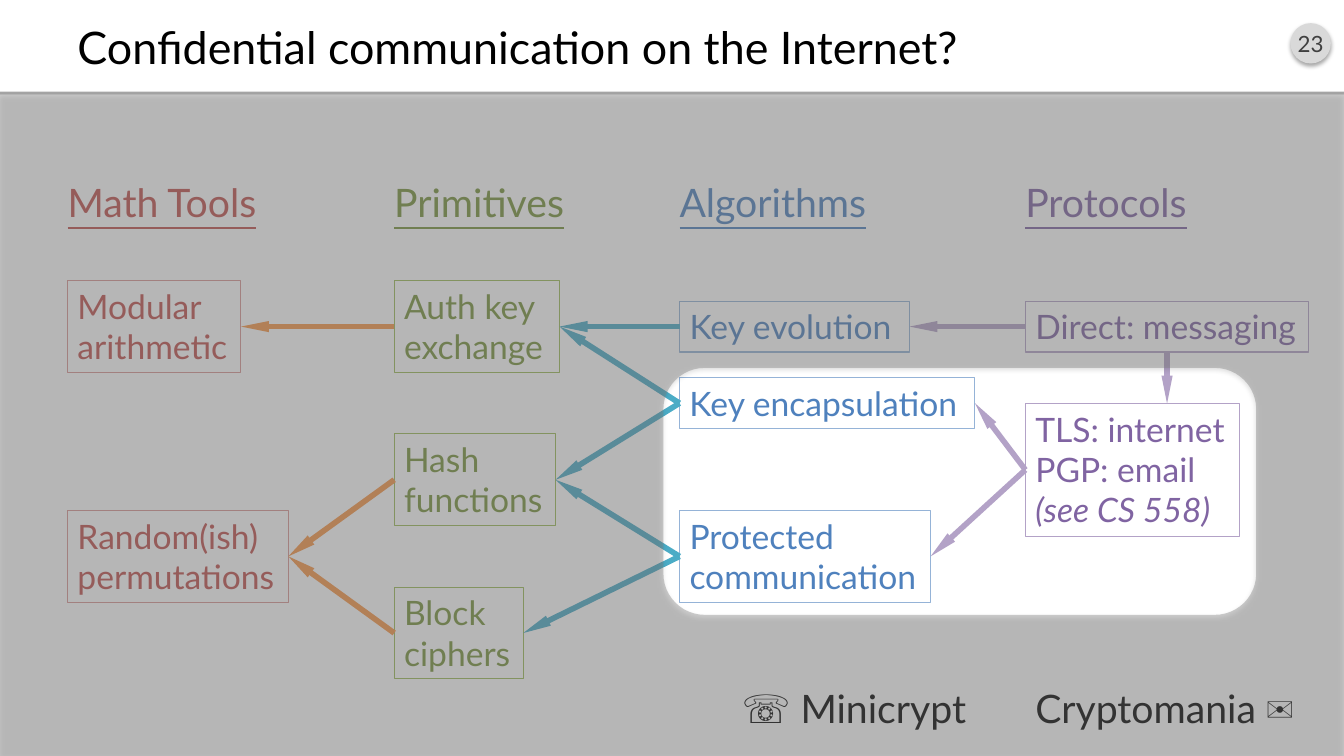
"""Build the slide mapping cryptographic tools to Internet protocols."""
import math

import lxml.etree
import pptx
import pptx.dml.color
import pptx.enum.shapes
import pptx.enum.text
import pptx.oxml.ns
import pptx.util

TITLE = "Confidential communication on the Internet?"
PAGE = "23"
FONT = "Lato"
COLORS = {
    "black": "000000", "badge": "D9D9D9", "page": "404040", "rule": "A6A6A6",
    "veil": "808080", "orange": "F79646", "teal": "4BACC6", "lilac": "B3A2C7",
}
COLUMNS = [
    {"head": "Math Tools", "x": 0.67, "w": 2.12, "text": "C0504D", "line": "D99694"},
    {"head": "Primitives", "x": 3.91, "w": 1.9, "text": "77933C", "line": "9BBB59"},
    {"head": "Algorithms", "x": 6.74, "w": 2.06, "text": "4F81BD", "line": "95B3D7"},
    {"head": "Protocols", "x": 10.17, "w": 1.8, "text": "8064A2", "line": "B3A2C7"},
]
BOXES = {
    "modular": (0, 0, 1.72, ["Modular\narithmetic"]),
    "random": (0, 3, 2.19, ["Random(ish)\npermutations"]),
    "auth": (1, 0, 1.64, ["Auth key\nexchange"]),
    "hash": (1, 2, 1.6, ["Hash\nfunctions"]),
    "block": (1, 4, 1.28, ["Block\nciphers"]),
    "evolution": (2, 0, 2.28, ["Key evolution"]),
    "encapsulation": (2, 1, 2.93, ["Key encapsulation"]),
    "protected": (2, 3, 2.49, ["Protected\ncommunication"]),
    "messaging": (3, 0, 2.81, ["Direct: messaging"]),
    "tls": (3, 1.87, 2.12, ["TLS: internet\nPGP: email", "(see CS 558)"]),
}
ARROWS = {
    "orange": [("auth", "modular"), ("hash", "random"), ("block", "random")],
    "teal": [("evolution", "auth"), ("encapsulation", "auth"), ("encapsulation", "hash"),
             ("protected", "hash"), ("protected", "block")],
    "lilac": [("messaging", "evolution"), ("tls", "encapsulation"), ("tls", "protected")],
}
WORLDS = [("☏ Minicrypt", 7.07, 2.61, True), ("Cryptomania ✉", 10.17, 2.98, False)]
W, H = 13.33, 7.5
ROW_TOP, ROW_STEP, LINE_H, PAD = 3.24, 0.76, 0.405, 0.1
VEIL_TOP = 0.94
SPOT = (6.58, 3.65, 12.46, 6.1, 0.41)

Inches, Pt = pptx.util.Inches, pptx.util.Pt
Shape = pptx.enum.shapes.MSO_SHAPE
Align = pptx.enum.text.PP_ALIGN
Anchor = pptx.enum.text.MSO_ANCHOR
qn = pptx.oxml.ns.qn


def rgb(value):
    return pptx.dml.color.RGBColor.from_string(value)


def write(sp, paragraphs, size, color, align=Align.LEFT, anchor=Anchor.TOP, wrap=False, left=0.1):
    tf = sp.text_frame
    tf.word_wrap, tf.vertical_anchor = wrap, anchor
    tf.margin_left = Inches(left)
    for i, text in enumerate(paragraphs):
        p = tf.add_paragraph() if i else tf.paragraphs[0]
        p.text, p.alignment = text, align
        p.font.name, p.font.size = FONT, Pt(size)
        p.font.color.rgb = rgb(color)
    return tf


def label(s, box, *args, **kwargs):
    return write(s.shapes.add_textbox(*map(Inches, box)), *args, **kwargs)


def shape(s, kind, box, fill=None, line=None):
    sp = s.shapes.add_shape(kind, *map(Inches, box))
    paint(sp, fill, line)
    return sp


def paint(sp, fill, line=None):
    sp.shadow.inherit = False
    if fill:
        sp.fill.solid()
        sp.fill.fore_color.rgb = rgb(fill)
    else:
        sp.fill.background()
    if line:
        sp.line.color.rgb, sp.line.width = rgb(line), Pt(0.75)
    else:
        sp.line.fill.background()


def set_alpha(color, percent):
    lxml.etree.SubElement(color, qn("a:alpha"), val=str(percent * 1000))


def add_shadow(sp):
    effects = sp._element.spPr.find(qn("a:effectLst"))
    outer = lxml.etree.SubElement(effects, qn("a:outerShdw"), blurRad=str(Pt(3.1)),
                                  dist=str(Pt(1.8)), dir="5400000", rotWithShape="0")
    set_alpha(lxml.etree.SubElement(outer, qn("a:srgbClr"), val=COLORS["black"]), 35)


def arrow(s, start, end, color):
    cx = s.shapes.add_connector(pptx.enum.shapes.MSO_CONNECTOR.STRAIGHT,
                                *map(Inches, start + end))
    cx.line.color.rgb, cx.line.width = rgb(color), Pt(4)
    lxml.etree.SubElement(cx.line._get_or_add_ln(), qn("a:tailEnd"),
                          type="triangle", w="sm", len="lg")
    lxml.etree.SubElement(cx._element.spPr, qn("a:effectLst"))


def box_frame(name):
    col, row, width, paragraphs = BOXES[name]
    lines = sum(text.count("\n") + 1 for text in paragraphs)
    height = PAD + LINE_H * lines
    return COLUMNS[col]["x"], ROW_TOP + ROW_STEP * row - height / 2, width, height


def spot_outline():
    x1, y1, x2, y2, r = SPOT
    corners = [(x1 + r, y1 + r, 270), (x1 + r, y2 - r, 180),
               (x2 - r, y2 - r, 90), (x2 - r, y1 + r, 0)]
    for cx, cy, start in corners:
        for step in range(13):
            angle = math.radians(start - step * 7.5)
            yield Inches(cx + r * math.cos(angle)), Inches(cy + r * math.sin(angle))


def add_veil(s):
    spot = list(spot_outline())
    frame = [(Inches(x), Inches(y)) for x, y in
             [(0, VEIL_TOP), (W, VEIL_TOP), (W, H), (0, H)]]
    builder = s.shapes.build_freeform(*spot[0])
    builder.add_line_segments(spot[1:], close=True)
    builder.move_to(*frame[0])
    builder.add_line_segments(frame[1:], close=True)
    sp = builder.convert_to_shape()
    paint(sp, COLORS["veil"])
    set_alpha(sp._element.spPr.find(qn("a:solidFill"))[0], 40)
    add_shadow(sp)


def main():
    prs = pptx.Presentation()
    prs.slide_width, prs.slide_height = Inches(W), Inches(H)
    s = prs.slides.add_slide(prs.slide_layouts[6])

    badge = shape(s, Shape.OVAL, (12.8, 0.23, 0.4, 0.4), COLORS["badge"])
    add_shadow(badge)
    tf = write(badge, [PAGE], 16, COLORS["page"], Align.CENTER, Anchor.MIDDLE, left=0)
    tf.margin_right = 0
    shape(s, Shape.RECTANGLE, (0, 0.91, W, 0.03), COLORS["rule"])
    label(s, (0.67, 0.16, 12, 0.6), [TITLE], 32, COLORS["black"],
          anchor=Anchor.MIDDLE, wrap=True)

    for col in COLUMNS:
        tf = label(s, (col["x"], 1.72, col["w"], 0.57), [col["head"]], 28, col["text"], left=0)
        tf.paragraphs[0].font.underline = True
    for text, x, width, right in WORLDS:
        label(s, (x, 6.74, width, 0.57), [text], 28, COLORS["black"],
              Align.RIGHT if right else Align.LEFT, wrap=right)

    for name, (col, row, width, paragraphs) in BOXES.items():
        style = COLUMNS[col]
        sp = shape(s, Shape.RECTANGLE, box_frame(name), line=style["line"])
        tf = write(sp, paragraphs, 24, style["text"])
        for p in tf.paragraphs[1:]:
            p.font.italic = True

    for color, pairs in ARROWS.items():
        for source, target in pairs:
            x, y, w, h = box_frame(source)
            tx, ty, tw, th = box_frame(target)
            arrow(s, (x, y + h / 2), (tx + tw, ty + th / 2), COLORS[color])
    x, y, w, h = box_frame("messaging")
    arrow(s, (x + w / 2, y + h), (x + w / 2, box_frame("tls")[1]), COLORS["lilac"])

    add_veil(s)
    prs.save("out.pptx")


if __name__ == "__main__":
    main()
